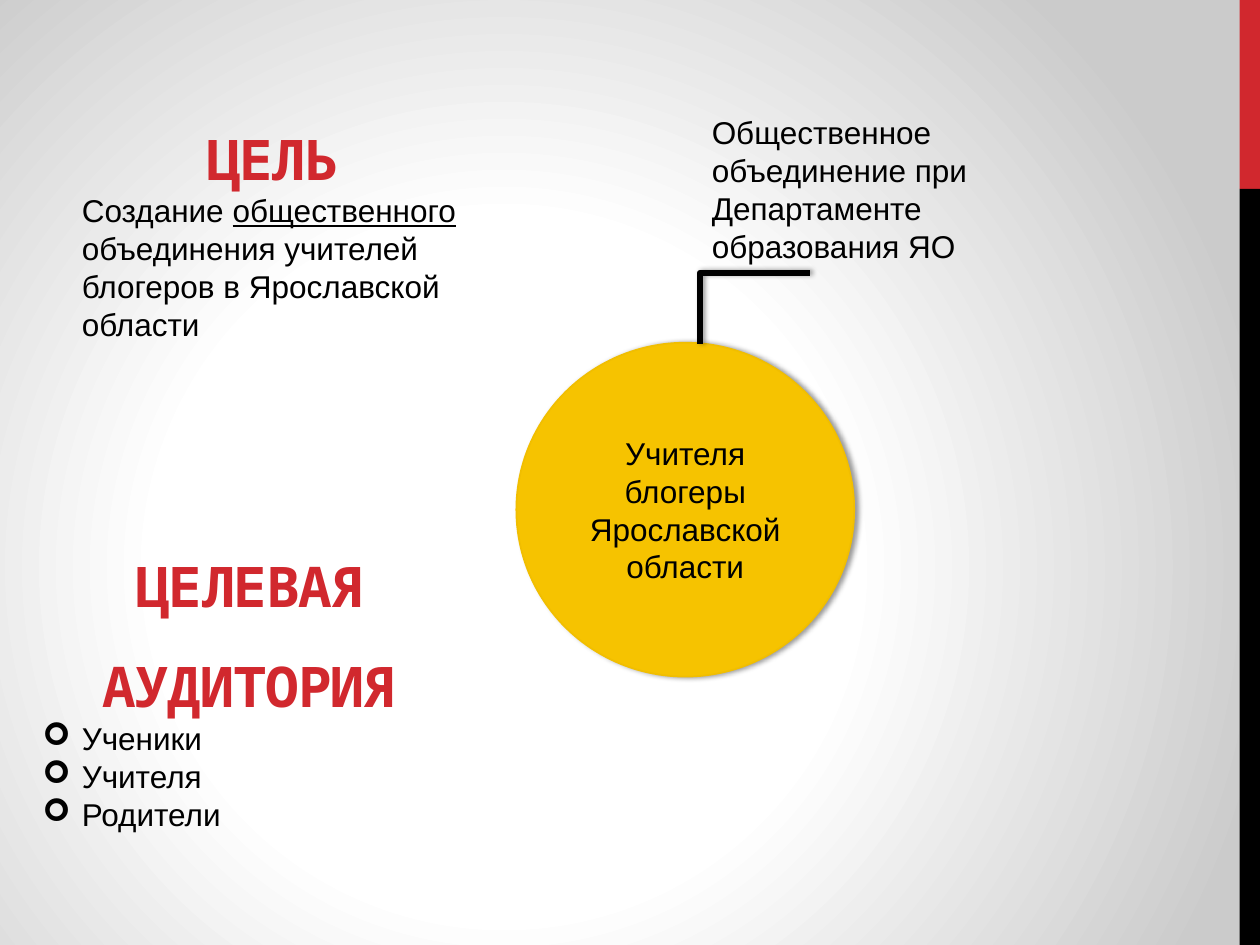
from lxml.etree import SubElement
from pptx import Presentation
from pptx.dml.color import RGBColor
from pptx.enum.shapes import MSO_CONNECTOR, MSO_SHAPE
from pptx.enum.text import MSO_ANCHOR, MSO_AUTO_SIZE, PP_ALIGN
from pptx.oxml import parse_xml
from pptx.oxml.ns import nsdecls, qn
from pptx.util import Cm, Pt

# Content: body paragraphs are lists of (text, underlined) runs
HUB = ["Учителя блогеры", "Ярославской области"]
NOTE = "Общественное объединение при Департаменте образования ЯО"
GOAL = ("ЦЕЛЬ", [[("Создание ", False), ("общественного", True),
                  (" объединения учителей блогеров в Ярославской области", False)]])
CROWD = ("ЦЕЛЕВАЯ АУДИТОРИЯ",
         [[(who, False)] for who in ("Ученики", "Учителя", "Родители")])

THEME = {
    "red": "D1282E", "black": "000000", "gold": "F6C300", "rim": "F1BE00",
    "glow": [(0, "FFFFFF"), (44, "FFFFFF"), (100, "CBCBCB")],
    "head": ("Noto Sans Mono", 32), "body": ("Arial", 18),
}

# Places in cm: left, top, width, height
WIDE, HIGH = 25.4, 19.05
BAR, SPLIT = 0.41, 3.81
HUB_AT = (10.41, 6.91, 6.81, 6.73)
NOTE_AT = (14.1, 2.16, 6.83, 3.33)
GOAL_AT = (1.4, 1.7, 8.18, 5.38)
CROWD_AT = (0.61, 10.31, 8.86, 6.68)
BEND_AT = (15.93, 7.32, 14.5, 5.11)  # begin and end before the quarter turn


def tint(name):
    return RGBColor.from_string(THEME[name])


def style(run, kind="body", color="black"):
    name, size = THEME[kind]
    run.font.name, run.font.size = name, Pt(size)
    run.font.color.rgb = tint(color)


def shade(shape):
    shape._element.spPr.append(parse_xml(
        f'<a:effectLst {nsdecls("a")}><a:outerShdw blurRad="{Pt(3.1)}" '
        f'dist="{Pt(1.8)}" dir="0" rotWithShape="0"><a:srgbClr val="{THEME["black"]}">'
        '<a:alpha val="40000"/></a:srgbClr></a:outerShdw></a:effectLst>'))


def solid(slide, kind, place, color):
    shape = slide.shapes.add_shape(kind, *map(Cm, place))
    shape.fill.solid()
    shape.fill.fore_color.rgb = tint(color)
    return shape


def box(slide, place):
    frame = slide.shapes.add_textbox(*map(Cm, place)).text_frame
    frame.word_wrap = True
    frame.auto_size = MSO_AUTO_SIZE.SHAPE_TO_FIT_TEXT
    return frame


def bullet(para):
    props = para._p.get_or_add_pPr()
    props.set("marL", str(Cm(0.79)))
    props.set("indent", str(-Cm(0.79)))
    SubElement(props, qn("a:buFont")).set("typeface", "Wingdings")
    SubElement(props, qn("a:buChar")).set("char", "➢")


def block(slide, place, content, listed=False):
    title, paras = content
    frame = box(slide, place)
    frame.text = title
    head = frame.paragraphs[0]
    head.alignment, head.line_spacing = PP_ALIGN.CENTER, 1.5
    run = head.runs[0]
    style(run, "head", "red")
    run.font.bold = True
    run.font._element.set("spc", "-60")
    for parts in paras:
        para = frame.add_paragraph()
        if listed:
            bullet(para)
        for text, lined in parts:
            run = para.add_run()
            run.text = text
            style(run)
            if lined:
                run.font.underline = True


def backdrop(slide):
    stops = "".join(f'<a:gs pos="{pos * 1000}"><a:srgbClr val="{color}"/></a:gs>'
                    for pos, color in THEME["glow"])
    slide._element.cSld.insert(0, parse_xml(
        f'<p:bg {nsdecls("p", "a")}><p:bgPr><a:gradFill rotWithShape="1">'
        f'<a:gsLst>{stops}</a:gsLst><a:path path="circle">'
        '<a:fillToRect l="40000" t="60000" r="60000" b="40000"/></a:path>'
        '</a:gradFill><a:effectLst/></p:bgPr></p:bg>'))


def main():
    deck = Presentation()
    deck.slide_width, deck.slide_height = Cm(WIDE), Cm(HIGH)
    slide = deck.slides.add_slide(deck.slide_layouts[6])
    backdrop(slide)

    # Side bars
    for top, end, color in ((0, SPLIT, "red"), (SPLIT, HIGH, "black")):
        bar = solid(slide, MSO_SHAPE.RECTANGLE,
                    (WIDE - BAR, top, BAR, end - top), color)
        bar.line.fill.background()
        bar.shadow.inherit = False

    # Central circle
    hub = solid(slide, MSO_SHAPE.OVAL, HUB_AT, "gold")
    hub.line.color.rgb, hub.line.width = tint("rim"), Pt(1)
    shade(hub)
    frame = hub.text_frame
    frame.text = "\n".join(HUB)
    frame.word_wrap, frame.vertical_anchor = True, MSO_ANCHOR.MIDDLE
    for para in frame.paragraphs:
        para.alignment = PP_ALIGN.CENTER
        style(para.runs[0])

    # Bent line from the circle to its note
    bend = slide.shapes.add_connector(MSO_CONNECTOR.ELBOW, *map(Cm, BEND_AT))
    bend.line.color.rgb, bend.line.width = tint("black"), Pt(3.25)
    props = bend._element.spPr
    props.find(qn("a:prstGeom")).set("prst", "bentConnector2")
    props.find(qn("a:xfrm")).set("rot", str(90 * 60000))
    shade(bend)

    # Texts
    note = box(slide, NOTE_AT)
    note.text = NOTE
    style(note.paragraphs[0].runs[0])
    block(slide, GOAL_AT, GOAL)
    block(slide, CROWD_AT, CROWD, listed=True)

    deck.save("out.pptx")


if __name__ == "__main__":
    main()
